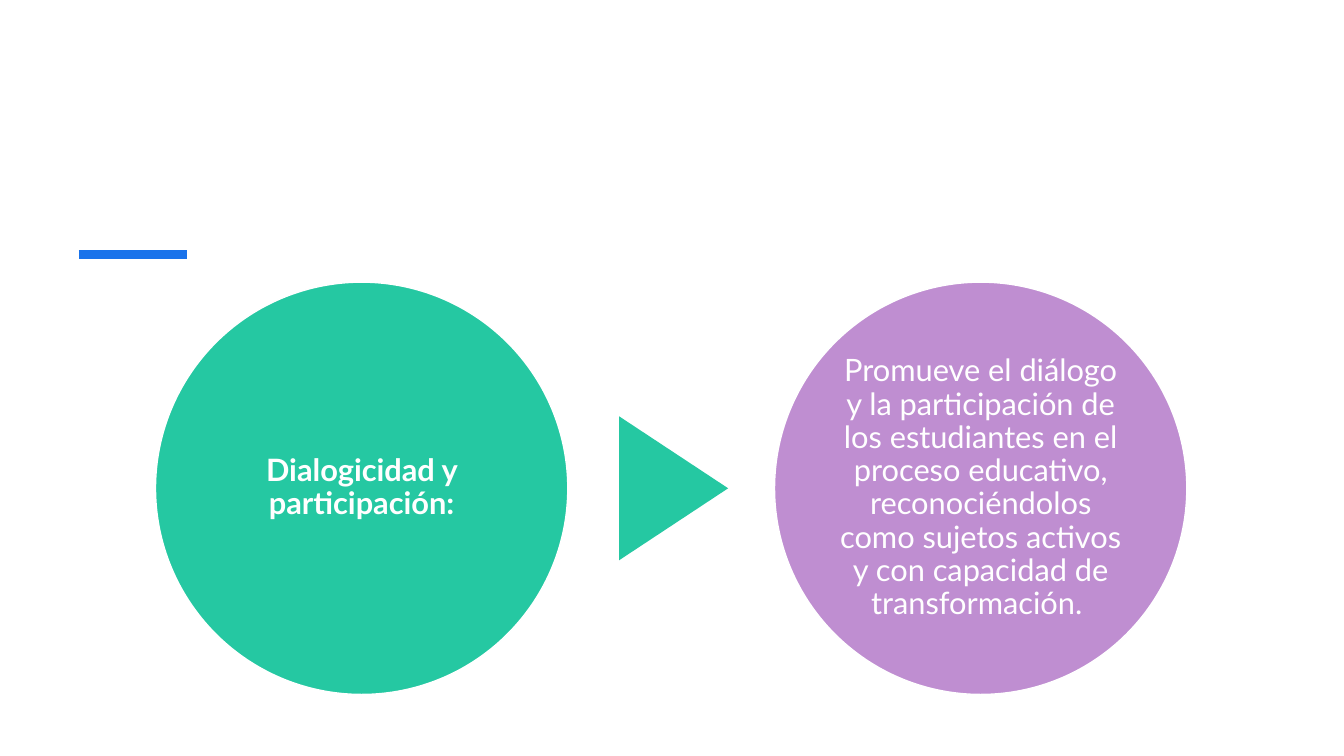
from pptx import Presentation
from pptx.dml.color import RGBColor
from pptx.enum.shapes import MSO_CONNECTOR, MSO_SHAPE
from pptx.enum.text import MSO_ANCHOR, PP_ALIGN
from pptx.oxml.ns import qn
from pptx.util import Cm, Pt
from lxml import etree

STRAIGHT = MSO_CONNECTOR.STRAIGHT
ELLIPSE = MSO_SHAPE.OVAL
TRIANGLE = MSO_SHAPE.ISOSCELES_TRIANGLE
MIDDLE = MSO_ANCHOR.MIDDLE
CENTER = PP_ALIGN.CENTER

WHITE = RGBColor(0xFF, 0xFF, 0xFF)
BLUE = RGBColor(0x19, 0x73, 0xEB)
GREEN = RGBColor(0x25, 0xC8, 0xA2)
PURPLE = RGBColor(0xBF, 0x8E, 0xD1)

FONT = "Lato"
ARROW_BASE, ARROW_HEIGHT = 3.63, 2.75

STEPS = [
    ("Dialogicidad y participación:", GREEN, True),
    ("Promueve el diálogo y la participación de los estudiantes en el "
     "proceso educativo, reconociéndolos como sujetos activos y con "
     "capacidad de transformación. ", PURPLE, False),
]


def write_text(frame, text, size=22, bold=False, color=WHITE):
    frame.word_wrap = True
    frame.vertical_anchor = MIDDLE
    frame.margin_left = frame.margin_right = Cm(0.08)
    frame.margin_top = frame.margin_bottom = Cm(0.08)
    para = frame.paragraphs[0]
    para.alignment = CENTER
    para.line_spacing = 0.9
    span = para.add_run()
    span.text = text
    span.font.name = FONT
    span.font.size = Pt(size)
    span.font.bold = bold
    span.font.color.rgb = color


def add_solid(page, kind, left, top, width, height, color):
    shape = page.shapes.add_shape(kind, Cm(left), Cm(top), Cm(width), Cm(height))
    shape.shadow.inherit = False
    shape.fill.solid()
    shape.fill.fore_color.rgb = color
    shape.line.fill.background()
    return shape


def add_accent(page, left, top, width):
    accent = page.shapes.add_connector(
        STRAIGHT, Cm(left), Cm(top), Cm(left + width), Cm(top))
    accent.line.color.rgb = BLUE
    accent.line.width = Pt(6)
    properties = accent._element.spPr
    etree.SubElement(properties, qn("a:effectLst"))


def add_process(page, left, top, width, height):
    """Circles as tall as the box, spread over its width, with arrows between."""
    pitch = (width - height) / (len(STEPS) - 1)
    for index, (text, color, bold) in enumerate(STEPS):
        circle_left = left + index * pitch
        # Arrow from the previous circle, in that circle's colour
        if index:
            center = circle_left - (pitch - height) / 2 + 0.06
            arrow = add_solid(
                page, TRIANGLE, center - ARROW_BASE / 2,
                top + (height - ARROW_HEIGHT) / 2,
                ARROW_BASE, ARROW_HEIGHT, STEPS[index - 1][1])
            arrow.rotation = 90
        # Circle with its text
        circle = add_solid(page, ELLIPSE, circle_left, top, height, height, color)
        circle.line.color.rgb = WHITE
        circle.line.width = Pt(1)
        write_text(circle.text_frame, text, bold=bold)


def main():
    deck = Presentation()
    deck.slide_width, deck.slide_height = Cm(33.87), Cm(19.05)
    page = deck.slides.add_slide(deck.slide_layouts[6])
    add_accent(page, left=1.99, top=6.41, width=2.73)
    add_process(page, left=3.92, top=7.11, width=25.99, height=10.39)
    deck.save("out.pptx")


if __name__ == "__main__":
    main()
